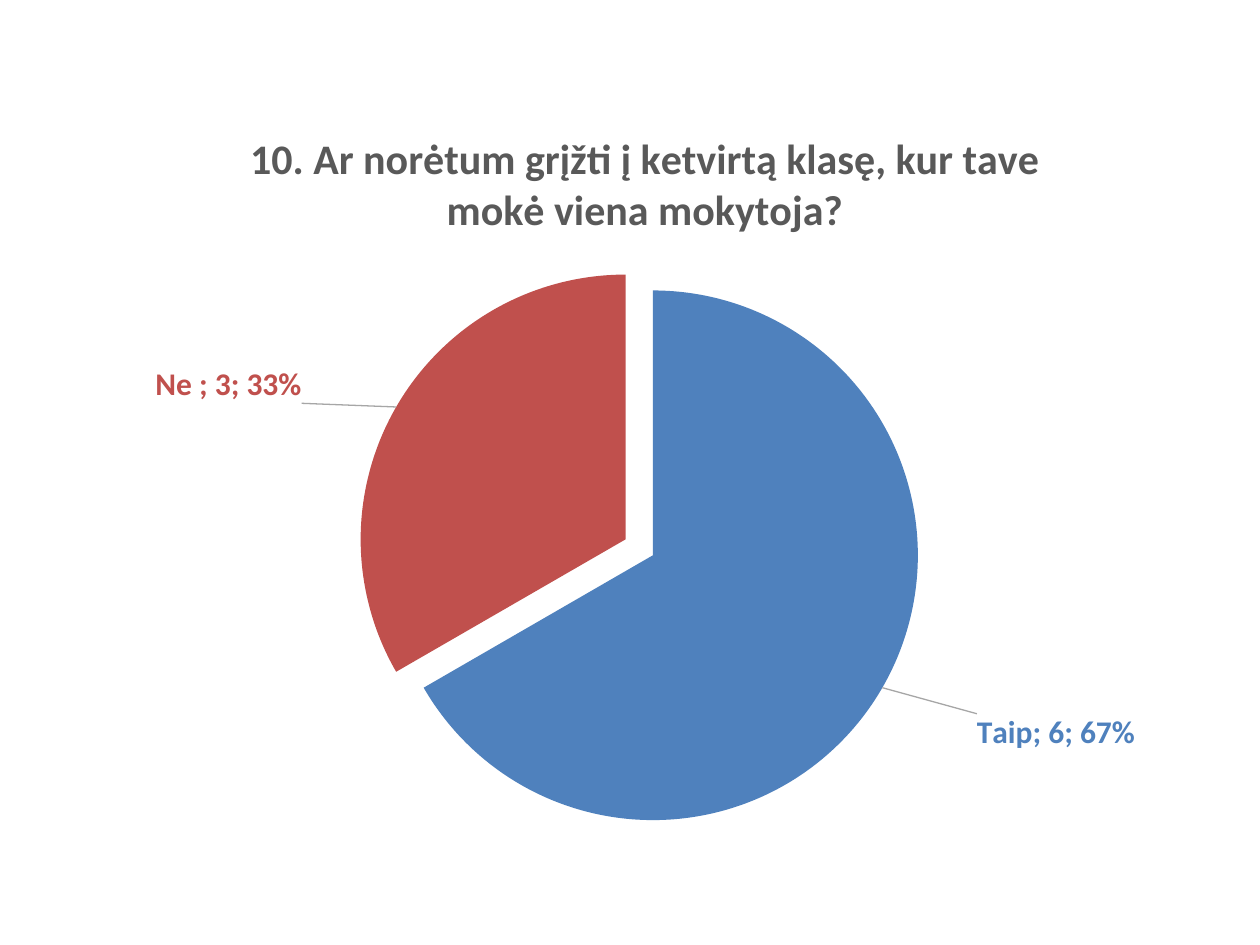
from pptx import Presentation
from pptx.chart.data import CategoryChartData
from pptx.dml.color import RGBColor
from pptx.enum.chart import XL_CHART_TYPE, XL_LABEL_POSITION
from pptx.oxml import parse_xml
from pptx.oxml.ns import nsdecls, qn
from pptx.util import Cm, Pt

PIE = XL_CHART_TYPE.PIE
OUTSIDE_END = XL_LABEL_POSITION.OUTSIDE_END
FONT = "Calibri"
COLORS = {"title": "595959", "leader": "A6A6A6", "Taip": "4F81BD", "Ne ": "C0504D"}
ANSWERS = {"Taip": 6, "Ne ": 3}
LABEL_SHIFTS = [(0.08, 0.03), (-0.08, 0)]
TITLE = "10. Ar norėtum grįžti į ketvirtą klasę, kur tave mokė viena mokytoja?"


def style_font(font, size, color):
    font.name = FONT
    font.size = Pt(size)
    font.bold = True
    font.color.rgb = RGBColor.from_string(color)


def layout_xml(x, y, extra=""):
    return parse_xml(
        f'<c:layout {nsdecls("c")}><c:manualLayout>{extra}'
        f'<c:x val="{x}"/><c:y val="{y}"/></c:manualLayout></c:layout>')


prs = Presentation()
prs.slide_width, prs.slide_height = Cm(25.4), Cm(19.05)
s = prs.slides.add_slide(prs.slide_layouts[6])

data = CategoryChartData()
data.categories = list(ANSWERS)
data.add_series(TITLE, list(ANSWERS.values()))
chart = s.shapes.add_chart(PIE, Cm(1.9), Cm(2.03), Cm(22.2), Cm(15.01), data).chart
chart.font.name = FONT
chart.font.size = Pt(10)
chart.has_legend = False
chart.has_title = True
tf = chart.chart_title.text_frame
tf.text = TITLE
style_font(tf.paragraphs[0].runs[0].font, 24, COLORS["title"])
chart.chart_title.include_in_layout = False

plot = chart.plots[0]
plot.vary_by_categories = True
pie = plot.series[0]
labels = pie.data_labels
labels.show_value = labels.show_percentage = labels.show_category_name = True
labels.position = OUTSIDE_END
style_font(labels.font, 18, COLORS["Taip"])

for i, answer in enumerate(ANSWERS):
    point = pie.points[i]
    point.format.fill.solid()
    point.format.fill.fore_color.rgb = RGBColor.from_string(COLORS[answer])
    point.format.line.fill.background()
    style_font(point.data_label.font, 18, COLORS[answer])
    point.data_label.position = OUTSIDE_END

root = chart.element
explosion = parse_xml(f'<c:explosion {nsdecls("c")} val="6"/>')
next(root.iter(qn("c:dPt"))).addprevious(explosion)

point_labels = list(root.iter(qn("c:dLbl")))
for label, (x, y) in zip(point_labels, LABEL_SHIFTS):
    label.find(qn("c:idx")).addnext(layout_xml(x, y))

group = next(root.iter(qn("c:dLbls")))
for label in point_labels + [group]:
    for tag in ("c:showVal", "c:showCatName", "c:showPercent"):
        label.find(qn(tag)).set("val", "1")
    label.find(qn("c:showBubbleSize")).addnext(
        parse_xml(f'<c:separator {nsdecls("c")}>; </c:separator>'))

for old in group.findall(qn("c:showLeaderLines")):
    group.remove(old)
group.append(parse_xml(f'<c:showLeaderLines {nsdecls("c")} val="1"/>'))
group.append(parse_xml(
    f'<c:leaderLines {nsdecls("c", "a")}><c:spPr><a:ln w="9525"><a:solidFill>'
    f'<a:srgbClr val="{COLORS["leader"]}"/></a:solidFill></a:ln></c:spPr></c:leaderLines>'))

area = next(root.iter(qn("c:plotArea")))
for old in area.findall(qn("c:layout")):
    area.remove(old)
area_layout = layout_xml(0.24, 0.22, '<c:layoutTarget val="inner"/>'
                         '<c:xMode val="edge"/><c:yMode val="edge"/>')
for tag, size in (("w", 0.51), ("h", 0.76)):
    area_layout[0].append(parse_xml(f'<c:{tag} {nsdecls("c")} val="{size}"/>'))
area.insert(0, area_layout)

prs.save("out.pptx")
